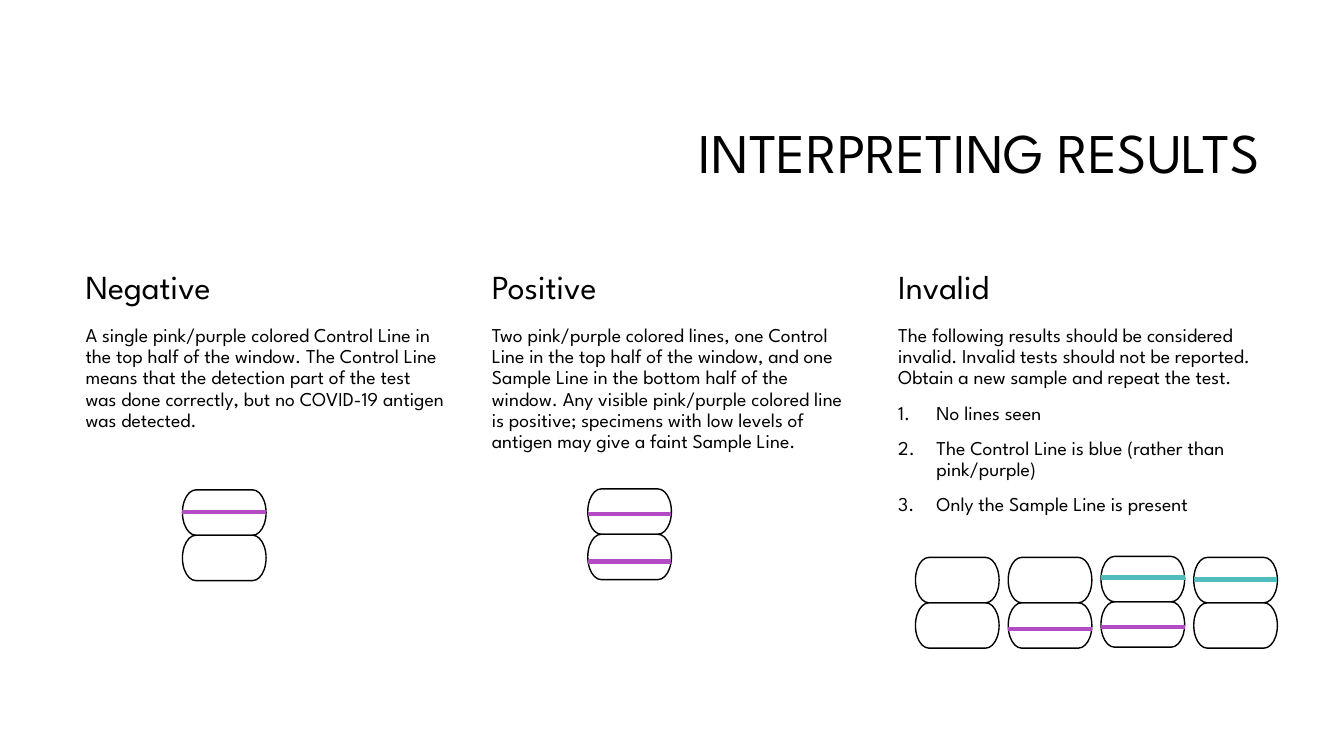
import pptx
import pptx.dml.color
import pptx.enum.shapes
import pptx.enum.text
import pptx.oxml
import pptx.oxml.ns
import pptx.util

Inches = pptx.util.Inches
Pt = pptx.util.Pt
Anchor = pptx.enum.text.MSO_ANCHOR
Align = pptx.enum.text.PP_ALIGN

BLACK, PURPLE, TEAL = "000000", "B34CC4", "51BCBF"


def color(value):
    return pptx.dml.color.RGBColor.from_string(value)


class ResultsSlide:
    font = "League Spartan"
    window_width = 0.83
    half_height = 0.45

    def __init__(self, page):
        self.page = page

    def text(self, left, top, width, height, paragraphs, size,
             anchor=Anchor.TOP, align=Align.LEFT, numbered_from=None):
        """Add a text box; paragraphs from index numbered_from on are numbered."""
        box = self.page.shapes.add_textbox(
            Inches(left), Inches(top), Inches(width), Inches(height))
        frame = box.text_frame
        frame.word_wrap = True
        frame.vertical_anchor = anchor
        frame.text = "\n".join(paragraphs)
        for index, para in enumerate(frame.paragraphs):
            para.alignment = align
            para.line_spacing = 0.9
            if index:
                para.space_before = Pt(10)
            if numbered_from is not None and index >= numbered_from:
                self.number(para)
            for span in para.runs:
                span.font.name = self.font
                span.font.size = Pt(size)
                span.font.color.rgb = color(BLACK)

    def number(self, para):
        properties = para._p.get_or_add_pPr()
        properties.set("marL", str(Inches(0.38)))
        properties.set("indent", str(-Inches(0.38)))
        bullet = pptx.oxml.ns.qn("a:buAutoNum")
        properties.append(properties.makeelement(bullet, {"type": "arabicPeriod"}))

    def test_window(self, left, top, bands):
        """Add a two-part test window with (height on slide, colour) bands."""
        group = self.page.shapes.add_group_shape()
        for half in range(2):
            self.half_window(group, left, top + half * self.half_height)
        for band_top, band_color in bands:
            self.band(group, left, band_top, band_color)

    def half_window(self, group, left, top):
        shape = group.shapes.add_shape(
            pptx.enum.shapes.MSO_SHAPE.FLOWCHART_TERMINATOR,
            Inches(left), Inches(top),
            Inches(self.window_width), Inches(self.half_height))
        shape.shadow.inherit = False
        shape.fill.background()
        shape.line.color.rgb = color(BLACK)
        shape.line.width = Pt(1)

    def band(self, group, left, top, band_color):
        line = group.shapes.add_connector(
            pptx.enum.shapes.MSO_CONNECTOR.STRAIGHT,
            Inches(left), Inches(top),
            Inches(left + self.window_width), Inches(top))
        line.line.color.rgb = color(band_color)
        line.line.width = Pt(3)
        properties = line._element.spPr
        properties.append(pptx.oxml.parse_xml(
            "<a:effectLst %s/>" % pptx.oxml.ns.nsdecls("a")))


RESULTS = [
    ("Negative", [
        "A single pink/purple colored Control Line in the top half of the window. "
        "The Control Line means that the detection part of the test was done "
        "correctly, but no COVID-19 antigen was detected."]),
    ("Positive", [
        "Two pink/purple colored lines, one Control Line in the top half of the "
        "window, and one Sample Line in the bottom half of the window. Any visible "
        "pink/purple colored line is positive; specimens with low levels of antigen "
        "may give a faint Sample Line."]),
    ("Invalid", [
        "The following results should be considered invalid. Invalid tests should "
        "not be reported. Obtain a new sample and repeat the test.",
        "No lines seen",
        "The Control Line is blue (rather than pink/purple)",
        "Only the Sample Line is present"]),
]

# Left, top and colored bands of each test window
WINDOWS = [
    (5.83, 4.85, [(5.1, PURPLE), (5.57, PURPLE)]),
    (1.81, 4.86, [(5.08, PURPLE)]),
    (10.92, 5.52, [(6.22, PURPLE), (5.73, TEAL)]),
    (11.84, 5.53, [(5.75, TEAL)]),
    (10, 5.53, [(6.24, PURPLE)]),
    (9.08, 5.53, []),
]


def main():
    deck = pptx.Presentation()
    deck.slide_width, deck.slide_height = Inches(13.33), Inches(7.5)
    slide = ResultsSlide(deck.slides.add_slide(deck.slide_layouts[6]))

    # Title
    slide.text(3.17, 0.83, 9.42, 1.43, ["INTERPRETING RESULTS"], 40,
               Anchor.MIDDLE, Align.RIGHT)

    # Three columns: heading and explanation
    for column, (heading, body) in enumerate(RESULTS):
        left = 0.75 + column * 4.03
        slide.text(left, 2.41, 3.78, 0.68, [heading], 24, Anchor.BOTTOM)
        slide.text(left, 3.18, 3.78, 3.62, body, 14, numbered_from=1)

    # Test windows
    for left, top, bands in WINDOWS:
        slide.test_window(left, top, bands)

    deck.save("out.pptx")


if __name__ == "__main__":
    main()
